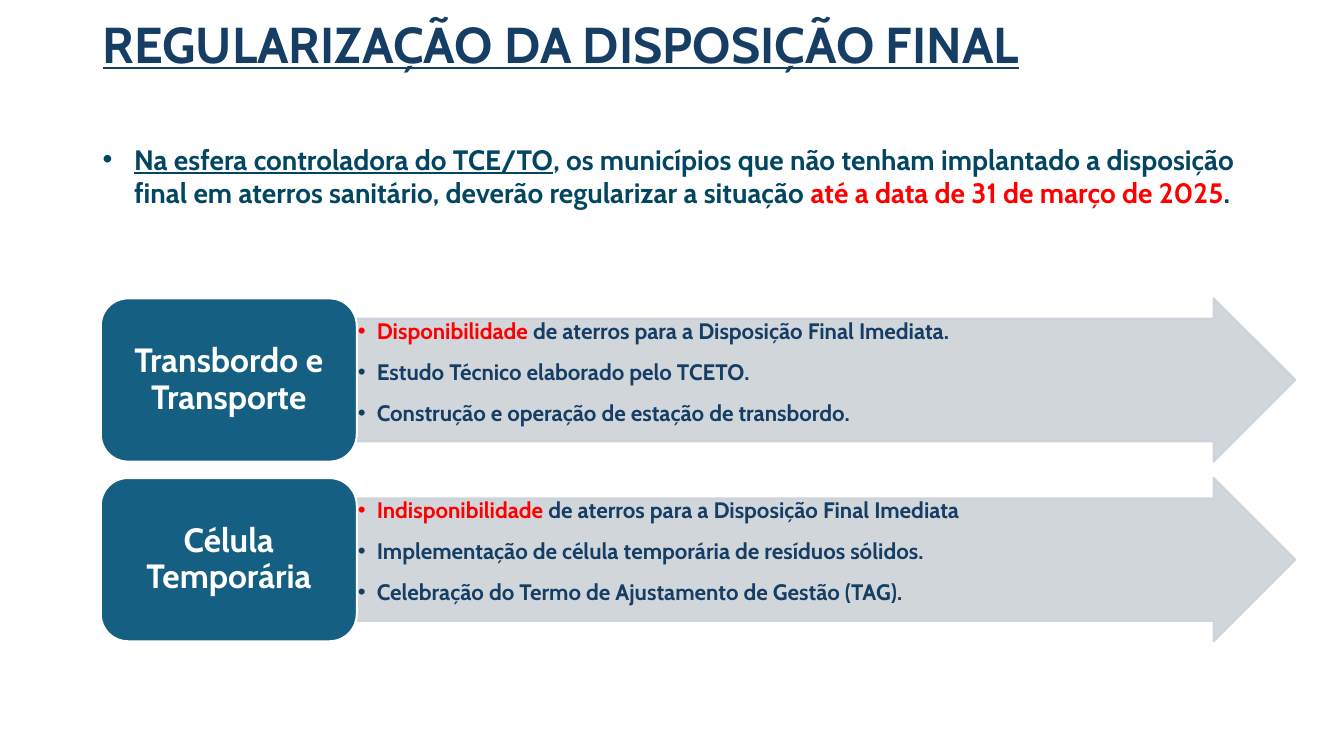
from pptx import Presentation
from pptx.dml.color import RGBColor
from pptx.enum.shapes import MSO_SHAPE
from pptx.enum.text import MSO_ANCHOR, MSO_AUTO_SIZE, PP_ALIGN
from pptx.oxml.ns import qn
from pptx.util import Pt
from lxml import etree

ARROW, CARD = MSO_SHAPE.RIGHT_ARROW, MSO_SHAPE.ROUNDED_RECTANGLE
TOP, MIDDLE = MSO_ANCHOR.TOP, MSO_ANCHOR.MIDDLE
LEFT, CENTER = PP_ALIGN.LEFT, PP_ALIGN.CENTER
NO_AUTOFIT = MSO_AUTO_SIZE.NONE
TITLE_ONLY = 5
FONT = "Cabin"
COLORS = {
    "title": "163E64",
    "intro": "024662",
    "alert": "FF0000",
    "card": "156082",
    "arrow": "CCD2D8",
    "white": "FFFFFF",
}
TITLE_BOX = (66.24, 7.92, 828, 51.12)
INTRO_BOX = (66.24, 97.92, 864.72, 79.92)
FIRST_ROW_BOX = (72, 213.12, 853.2, 116.64)
ROW_PITCH = 128.3
CARD_WIDTH = 182.88

TITLE = "REGULARIZAÇÃO DA DISPOSIÇÃO FINAL"
INTRO = [
    ("Na esfera controladora do TCE/TO", "intro", True),
    (", os municípios que não tenham implantado a disposição final em aterros "
     "sanitário, deverão regularizar a situação ", "intro", False),
    ("até a data de 31 de março de 2025", "alert", False),
    (".", "intro", False),
]
ROWS = [
    ("Transbordo e Transporte", [
        [("Disponibilidade", "alert", False),
         (" de aterros para a Disposição Final Imediata.", "title", False)],
        [("Estudo Técnico elaborado pelo TCETO.", "title", False)],
        [("Construção e operação de estação de transbordo.", "title", False)],
    ]),
    ("Célula Temporária", [
        [("Indisponibilidade", "alert", False),
         (" de aterros para a Disposição Final Imediata", "title", False)],
        [("Implementação de célula temporária de resíduos sólidos.", "title", False)],
        [("Celebração do Termo de Ajustamento de Gestão (TAG).", "title", False)],
    ]),
]


def set_values(target, values):
    """Set every attribute listed in a dict of format values."""
    for name, value in values.items():
        setattr(target, name, value)


def set_frame(frame, anchor, margins=(7.2, 3.6)):
    """Format a text frame with wrapping, anchor and margins."""
    horizontal, vertical = map(Pt, margins)
    set_values(frame, {
        "word_wrap": True, "auto_size": NO_AUTOFIT, "vertical_anchor": anchor,
        "margin_left": horizontal, "margin_right": horizontal,
        "margin_top": vertical, "margin_bottom": vertical,
    })


def write_runs(paragraph, runs, size, **layout):
    """Write bold coloured runs into a paragraph."""
    set_values(paragraph, layout)
    for text, color, underline in runs:
        run = paragraph.add_run()
        run.text = text
        set_values(run.font, {"name": FONT, "size": Pt(size), "bold": True,
                              "underline": underline})
        run.font.color.rgb = RGBColor.from_string(COLORS[color])


def add_bullet(paragraph, indent):
    """Give a paragraph a round bullet with a hanging indent."""
    properties = paragraph._p.get_or_add_pPr()
    properties.set("marL", str(Pt(indent)))
    properties.set("indent", str(-Pt(indent)))
    etree.SubElement(properties, qn("a:buFont")).set("typeface", "Arial")
    etree.SubElement(properties, qn("a:buChar")).set("char", "•")


def add_panel(slide, kind, box, fill, line, alpha=100):
    """Add a filled, outlined shape without shadow."""
    shape = slide.shapes.add_shape(kind, *map(Pt, box))
    shape.shadow.inherit = False
    shape.fill.solid()
    shape.line.width = Pt(1.5)
    for target, color in ((shape.fill.fore_color, fill), (shape.line.color, line)):
        target.rgb = RGBColor.from_string(COLORS[color])
    if alpha < 100:
        for color in shape._element.spPr.iter(qn("a:srgbClr")):
            etree.SubElement(color, qn("a:alpha")).set("val", str(alpha * 1000))
    return shape


def add_title(slide, box):
    """Place and format the slide title."""
    title = slide.shapes.title
    set_values(title, dict(zip(("left", "top", "width", "height"), map(Pt, box))))
    set_frame(title.text_frame, MIDDLE)
    write_runs(title.text_frame.paragraphs[0], [(TITLE, "title", True)], 36,
               alignment=LEFT, line_spacing=0.9)


def add_intro(slide, box):
    """Add the bulleted statement of the deadline."""
    frame = slide.shapes.add_textbox(*map(Pt, box)).text_frame
    set_frame(frame, TOP)
    add_bullet(frame.paragraphs[0], 22.5)
    write_runs(frame.paragraphs[0], INTRO, 20)


def add_row(slide, box, label, items):
    """Add a label card followed by an arrow with bulleted items."""
    left, top, width, height = box
    arrow_box = (left + CARD_WIDTH, top, width - CARD_WIDTH, height)
    arrow = add_panel(slide, ARROW, arrow_box, "arrow", "arrow", alpha=90)
    arrow.adjustments[0], arrow.adjustments[1] = 0.75, 0.5
    frame = arrow.text_frame
    set_frame(frame, TOP, (0.8, 0.8))
    for index, runs in enumerate(items):
        paragraph = frame.add_paragraph() if index else frame.paragraphs[0]
        add_bullet(paragraph, 13.5)
        write_runs(paragraph, runs, 16, alignment=LEFT, line_spacing=0.9,
                   space_after=Pt(12), level=1)

    card = add_panel(slide, CARD, (left, top, CARD_WIDTH, height), "card", "white")
    set_frame(card.text_frame, MIDDLE)
    write_runs(card.text_frame.paragraphs[0], [(label, "white", False)], 24,
               alignment=CENTER, line_spacing=0.9)


def main():
    """Build and save the presentation."""
    presentation = Presentation()
    presentation.slide_width, presentation.slide_height = Pt(960), Pt(540)
    slide = presentation.slides.add_slide(presentation.slide_layouts[TITLE_ONLY])
    add_title(slide, TITLE_BOX)
    left, top, width, height = FIRST_ROW_BOX
    for index, (label, items) in enumerate(ROWS):
        add_row(slide, (left, top + index * ROW_PITCH, width, height), label, items)
    add_intro(slide, INTRO_BOX)
    presentation.save("out.pptx")


if __name__ == "__main__":
    main()
